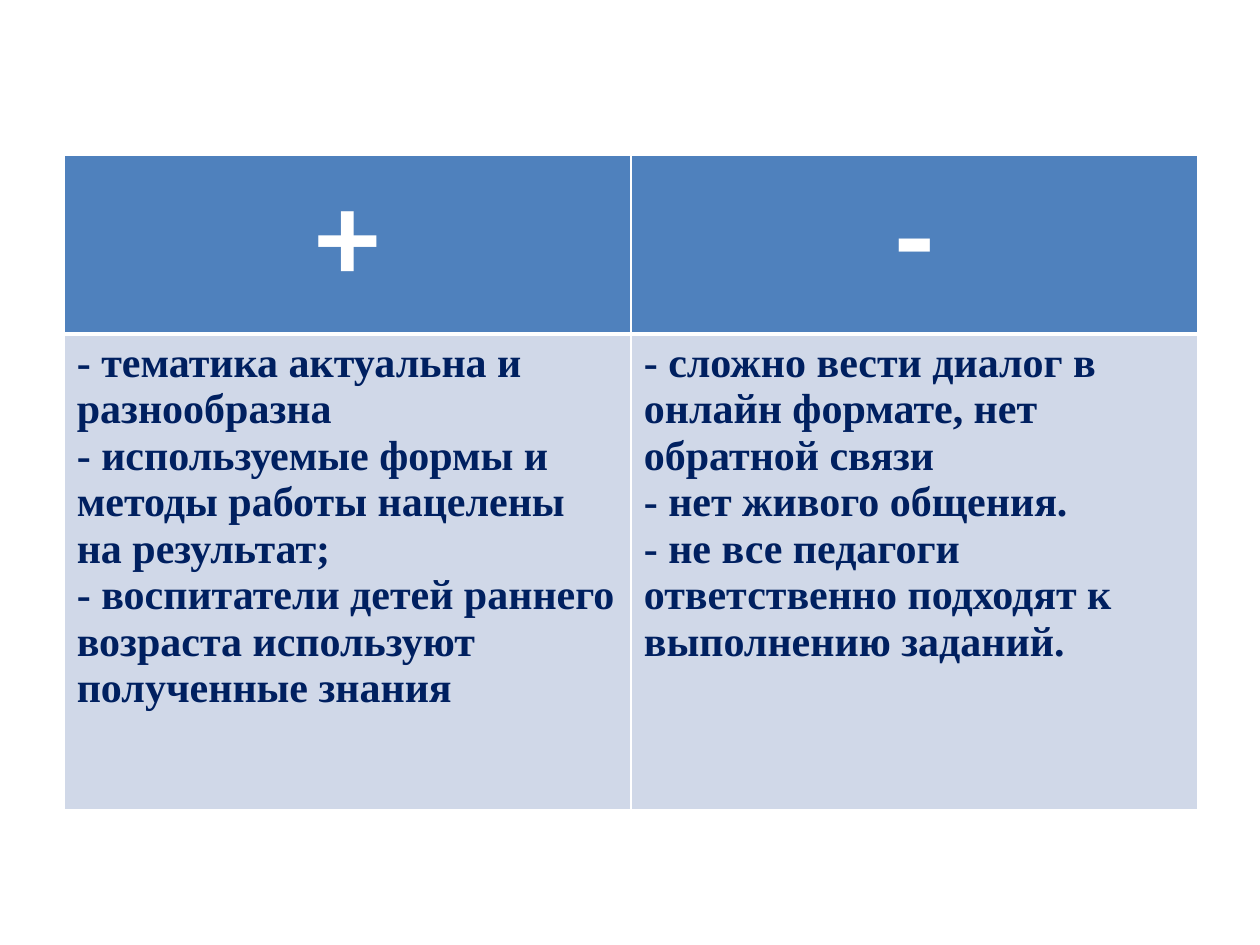
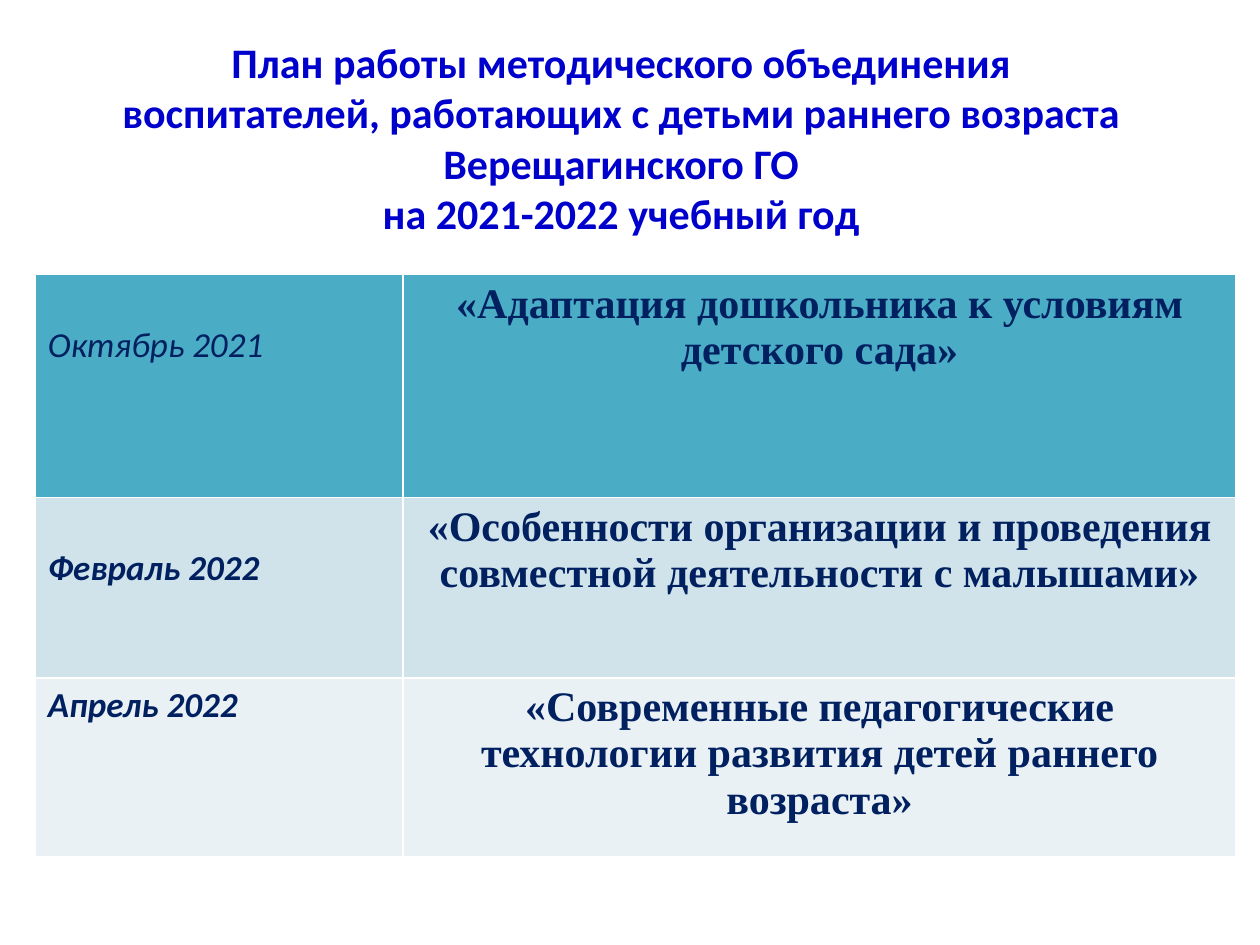
import dataclasses
from typing import Sequence

import lxml.etree
import pptx
import pptx.dml.color
import pptx.enum.text
import pptx.oxml.ns
import pptx.util

ALIGN = pptx.enum.text.PP_ALIGN
ANCHOR = pptx.enum.text.MSO_ANCHOR


@dataclasses.dataclass(frozen=True)
class Theme:
    sans: str = "Calibri"
    serif: str = "Times New Roman"
    white: str = "FFFFFF"
    navy: str = "002060"
    title_blue: str = "0000CC"
    header_blue: str = "4F81BD"
    pale_blue: str = "D0D8E8"
    teal: str = "4BACC6"
    pale_teal: str = "D0E3EA"
    light_teal: str = "E9F1F5"
    sign_size: int = 72
    text_size: int = 24
    month_size: int = 20
    thin: int = 1
    thick: int = 3


THEME = Theme()


@dataclasses.dataclass(frozen=True)
class TextStyle:
    size: int
    font: str
    color: str
    bold: bool = True
    italic: bool = False
    align: ALIGN = ALIGN.LEFT


@dataclasses.dataclass(frozen=True)
class CellSpec:
    lines: Sequence[str]
    style: TextStyle
    fill: str
    top_margin: float = 0.5


@dataclasses.dataclass(frozen=True)
class TableSpec:
    left: float
    top: float
    columns: Sequence[float]
    rows: Sequence[float]
    cells: Sequence[Sequence[CellSpec]]
    header_rule: int


TITLE = TextStyle(THEME.text_size, THEME.sans, THEME.title_blue, align=ALIGN.CENTER)
SIGN = TextStyle(THEME.sign_size, THEME.sans, THEME.white, align=ALIGN.CENTER)
POINT = TextStyle(THEME.text_size, THEME.serif, THEME.navy)
TOPIC = dataclasses.replace(POINT, align=ALIGN.CENTER)
MONTH = TextStyle(THEME.month_size, THEME.sans, THEME.navy, italic=True)
FIRST_MONTH = dataclasses.replace(MONTH, bold=False)

# The page is a grid of 100 columns and 75 rows
SLIDE_WIDTH = pptx.util.Inches(10)
SLIDE_HEIGHT = pptx.util.Inches(7.5)
LOWERED = 3.9  # top margin, in rows, that drops a month by one line


def across(columns: float) -> int:
    return round(SLIDE_WIDTH * columns / 100)


def down(rows: float) -> int:
    return round(SLIDE_HEIGHT * rows / 75)


def add_span(para, text: str, style: TextStyle) -> None:
    span = para.add_run()
    span.text = text
    font = span.font
    font.size = pptx.util.Pt(style.size)
    font.name = style.font
    font.bold = style.bold
    font.italic = style.italic
    font.color.rgb = pptx.dml.color.RGBColor.from_string(style.color)


def set_borders(cell, top: int, bottom: int) -> None:
    properties = cell._tc.get_or_add_tcPr()
    widths = {"lnL": THEME.thin, "lnR": THEME.thin, "lnT": top, "lnB": bottom}
    for position, (side, width) in enumerate(widths.items()):
        line = lxml.etree.Element(pptx.oxml.ns.qn(f"a:{side}"), w=str(pptx.util.Pt(width)))
        fill = lxml.etree.SubElement(line, pptx.oxml.ns.qn("a:solidFill"))
        lxml.etree.SubElement(fill, pptx.oxml.ns.qn("a:srgbClr"), val=THEME.white)
        properties.insert(position, line)


def fill_cell(cell, spec: CellSpec) -> None:
    cell.fill.solid()
    cell.fill.fore_color.rgb = pptx.dml.color.RGBColor.from_string(spec.fill)
    cell.margin_top = down(spec.top_margin)
    cell.vertical_anchor = ANCHOR.TOP
    frame = cell.text_frame
    for index, line in enumerate(spec.lines):
        para = frame.add_paragraph() if index else frame.paragraphs[0]
        para.alignment = spec.style.align
        add_span(para, line, spec.style)


def draw_table(page, spec: TableSpec) -> None:
    table = page.shapes.add_table(
        len(spec.rows), len(spec.columns), across(spec.left), down(spec.top),
        across(sum(spec.columns)), down(sum(spec.rows))).table
    table.horz_banding = False
    for column, width in zip(table.columns, spec.columns):
        column.width = across(width)
    for row, height in zip(table.rows, spec.rows):
        row.height = down(height)
    for row_index, row_cells in enumerate(spec.cells):
        top = spec.header_rule if row_index == 1 else THEME.thin
        bottom = spec.header_rule if row_index == 0 else THEME.thin
        for column_index, cell_spec in enumerate(row_cells):
            cell = table.cell(row_index, column_index)
            fill_cell(cell, cell_spec)
            set_borders(cell, top, bottom)


def draw_title(page, lines: Sequence[str]) -> None:
    title = page.shapes.title
    title.left, title.top = across(4.3), 0
    title.width, title.height = across(90), down(21.8)
    frame = title.text_frame
    frame.word_wrap = True
    frame.auto_size = pptx.enum.text.MSO_AUTO_SIZE.NONE
    frame.vertical_anchor = ANCHOR.MIDDLE
    para = frame.paragraphs[0]
    para.alignment = TITLE.align
    for index, line in enumerate(lines):
        if index:
            para.add_line_break()
        add_span(para, line, TITLE)


# Strengths and weaknesses
STRENGTHS = (
    "- тематика актуальна и разнообразна",
    "- используемые формы и методы работы нацелены на результат;",
    "- воспитатели детей раннего возраста используют полученные знания",
)
WEAKNESSES = (
    "- сложно вести диалог в онлайн формате, нет обратной связи",
    "- нет живого общения.",
    "- не все педагоги ответственно подходят к выполнению заданий.",
)
PROS_AND_CONS = TableSpec(
    left=5.1, top=12.3, columns=(45, 45), rows=(14.2, 37.8),
    cells=(
        [CellSpec((sign,), SIGN, THEME.header_blue) for sign in "+-"],
        [CellSpec(points, POINT, THEME.pale_blue) for points in (STRENGTHS, WEAKNESSES)],
    ),
    header_rule=THEME.thick,
)

# Year plan
PLAN_TITLE = (
    "План работы методического объединения",
    "воспитателей, работающих с детьми раннего возраста",
    "Верещагинского ГО",
    "на 2021-2022 учебный год",
)


def plan_row(month: str, topic: str, fill: str, style: TextStyle = MONTH,
             top_margin: float = LOWERED) -> Sequence[CellSpec]:
    return (CellSpec((month,), style, fill, top_margin),
            CellSpec((topic,), TOPIC, fill))


YEAR_PLAN = TableSpec(
    left=2.8, top=21.8, columns=(29.2, 66.1), rows=(17.7, 14.3, 14.2),
    cells=(
        plan_row("Октябрь 2021", "«Адаптация дошкольника к условиям детского сада»",
                 THEME.teal, FIRST_MONTH),
        plan_row("Февраль 2022",
                 "«Особенности организации и проведения совместной деятельности с малышами»",
                 THEME.pale_teal),
        plan_row("Апрель 2022",
                 "«Современные педагогические технологии развития детей раннего возраста»",
                 THEME.light_teal, top_margin=0.5),
    ),
    header_rule=THEME.thin,
)


def main() -> None:
    deck = pptx.Presentation()
    deck.slide_width, deck.slide_height = SLIDE_WIDTH, SLIDE_HEIGHT
    title_only, blank = deck.slide_layouts[5], deck.slide_layouts[6]

    draw_table(deck.slides.add_slide(blank), PROS_AND_CONS)

    plan_page = deck.slides.add_slide(title_only)
    draw_title(plan_page, PLAN_TITLE)
    draw_table(plan_page, YEAR_PLAN)

    deck.save("out.pptx")


if __name__ == "__main__":
    main()
